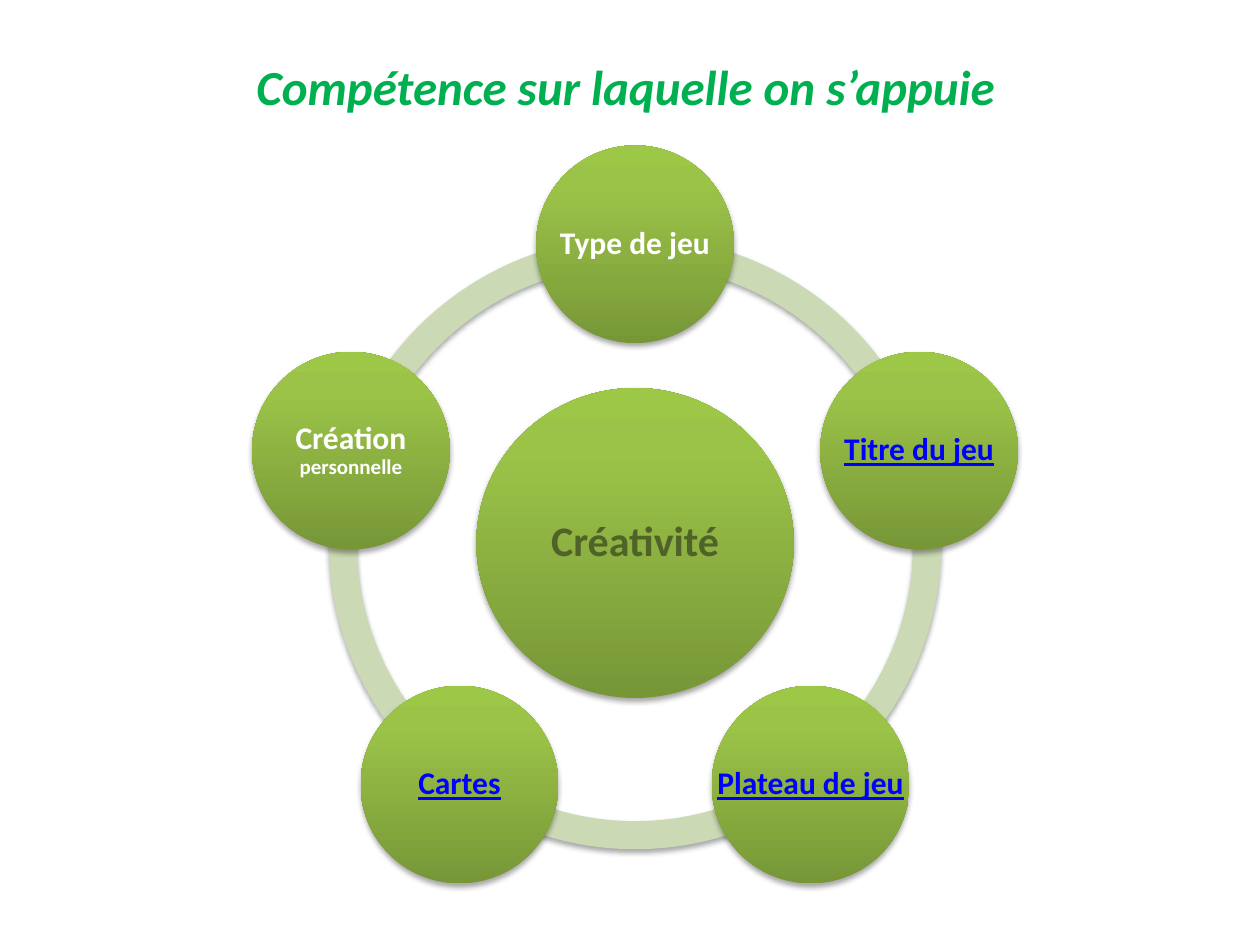
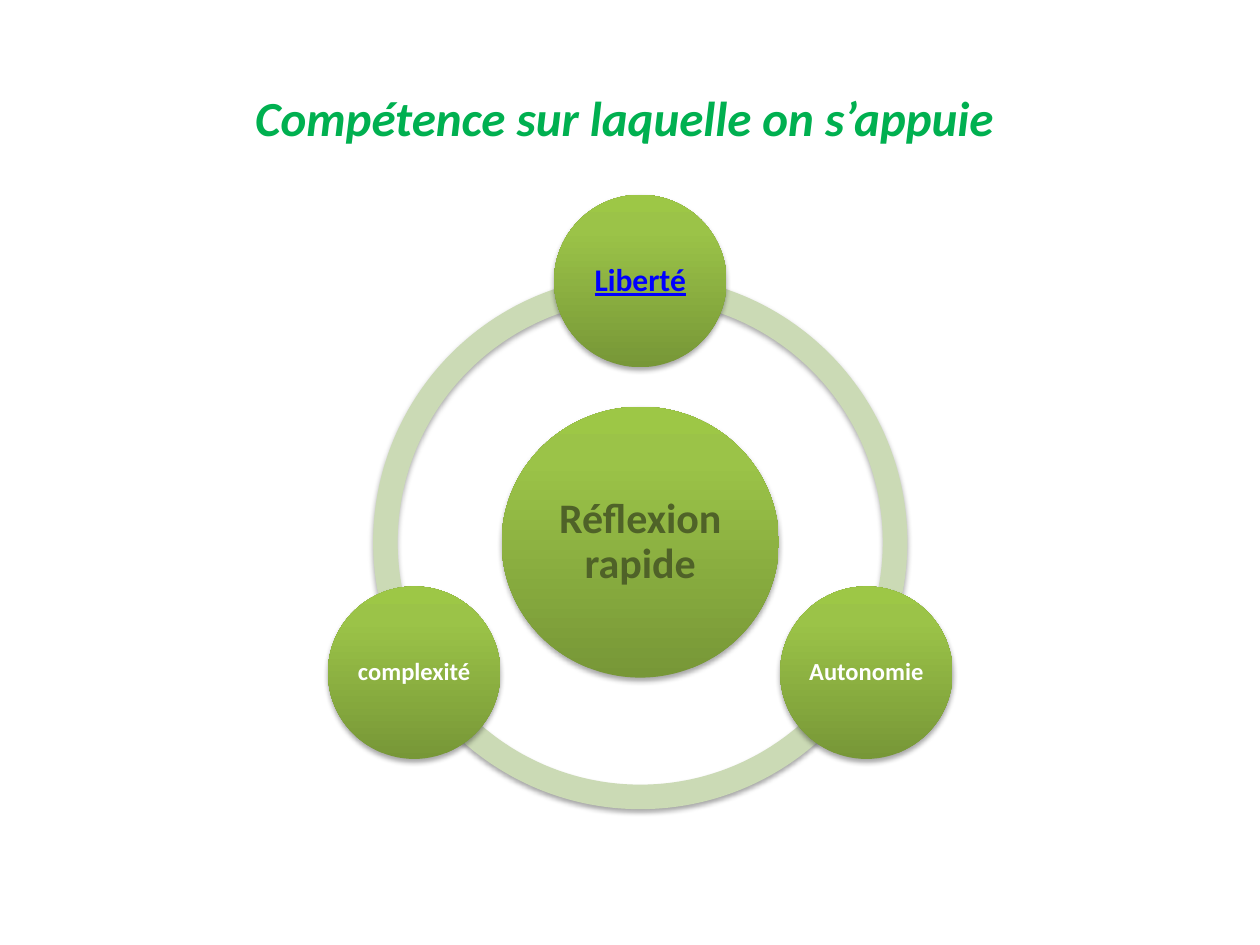
import copy
import math

import pptx
import pptx.dml.color
import pptx.enum.shapes
import pptx.enum.text
import pptx.util
from lxml import etree
from pptx.oxml.ns import qn

Pt = pptx.util.Pt

COLORS = {
    "title": "00B050",
    "ring": "CBDAB5",
    "dark": "779737",
    "middle": "9BC348",
    "light": "9DC746",
    "hub": "4F6228",
    "white": "FFFFFF",
    "link": "0000FF",
    "shadow": "000000",
}
FONT = "Calibri"
TITLE = "Compétence sur laquelle on s’appuie "
GRADIENT = [(0, "dark"), (0.8, "middle"), (1, "light")]
RING_THICKNESS = 0.046
LINK = {"color": "link", "underline": True}

SLIDES = [
    {
        "title_box": (36.7, 15.1, 648, 68.4),
        "center": (362.9, 310.3),
        "orbit": 170.7,
        "ring": 350,
        "hub": ("Créativité", 181.4, 177.1),
        "node_size": 113,
        "nodes": [
            ([("Type de jeu", 18)], {}),
            ([("Titre du jeu", 18)], LINK),
            ([("Plateau de jeu", 18)], LINK),
            ([("Cartes", 18)], LINK),
            ([("Création ", 18), ("personnelle", 12)], {}),
        ],
    },
    {
        "title_box": (36, 21.6, 648, 90),
        "center": (365.9, 309.8),
        "orbit": 149.2,
        "ring": 305.3,
        "hub": ("Réflexion rapide", 158.4, 154.8),
        "node_size": 98.6,
        "nodes": [
            ([("Liberté", 18)], LINK),
            ([("Autonomie", 14)], {}),
            ([("complexité", 14)], {}),
        ],
    },
]


def rgb(name):
    return pptx.dml.color.RGBColor.from_string(COLORS[name])


def write_text(frame, runs, color="white", italic=False, underline=False, spacing=None):
    frame.word_wrap = True
    frame.vertical_anchor = pptx.enum.text.MSO_ANCHOR.MIDDLE
    paragraph = frame.paragraphs[0]
    paragraph.alignment = pptx.enum.text.PP_ALIGN.CENTER
    paragraph.line_spacing = spacing
    for text, size in runs:
        run = paragraph.add_run()
        run.text = text
        font = run.font
        font.name, font.size, font.bold = FONT, Pt(size), True
        font.italic, font.underline = italic, underline
        font.color.rgb = rgb(color)


def centered_box(center, width, height):
    x, y = center
    return Pt(x - width / 2), Pt(y - height / 2), Pt(width), Pt(height)


def add_shadowed_shape(slide, kind, box):
    shape = slide.shapes.add_shape(kind, *box)
    shape.line.fill.background()
    shape.shadow.inherit = False
    effects = shape._element.spPr.find(qn("a:effectLst"))
    shadow = etree.SubElement(
        effects, qn("a:outerShdw"), blurRad=str(Pt(3.1)), dist=str(Pt(1.8)),
        dir="5400000", rotWithShape="0")
    color = etree.SubElement(shadow, qn("a:srgbClr"), val=COLORS["shadow"])
    etree.SubElement(color, qn("a:alpha"), val="35000")
    return shape


def add_arc(slide, center, size, start, end):
    arc = add_shadowed_shape(
        slide, pptx.enum.shapes.MSO_SHAPE.BLOCK_ARC, centered_box(center, size, size))
    arc.fill.solid()
    arc.fill.fore_color.rgb = rgb("ring")
    arc.adjustments[0] = start % 360 * 0.6
    arc.adjustments[1] = end % 360 * 0.6
    arc.adjustments[2] = RING_THICKNESS


def add_disc(slide, center, width, height, runs, **text_format):
    box = centered_box(center, width, height)
    disc = add_shadowed_shape(slide, pptx.enum.shapes.MSO_SHAPE.OVAL, box)
    disc.fill.gradient()
    disc.fill.gradient_angle = 90
    stops = disc._element.spPr.find(".//" + qn("a:gsLst"))
    stops.append(copy.deepcopy(stops[-1]))
    for stop, (position, color) in zip(disc.fill.gradient_stops, GRADIENT):
        stop.position = position
        stop.color.rgb = rgb(color)
    frame = slide.shapes.add_textbox(*box).text_frame
    frame.margin_left = frame.margin_right = Pt(1.8)
    frame.margin_top = frame.margin_bottom = Pt(1.8)
    write_text(frame, runs, spacing=0.9, **text_format)


def add_cycle_slide(presentation, content):
    slide = presentation.slides.add_slide(presentation.slide_layouts[5])
    title = slide.shapes.title
    title.left, title.top, title.width, title.height = map(Pt, content["title_box"])
    write_text(title.text_frame, [(TITLE, 28)], color="title", italic=True)

    center, orbit, size = content["center"], content["orbit"], content["node_size"]
    step = 360 / len(content["nodes"])
    angles = [270 + step * index for index in range(len(content["nodes"]))]
    for angle in reversed(angles):
        add_arc(slide, center, content["ring"], angle, angle + step)

    hub_text, hub_width, hub_height = content["hub"]
    add_disc(slide, center, hub_width, hub_height, [(hub_text, 24)], color="hub")
    for angle, (runs, text_format) in zip(angles, content["nodes"]):
        radians = math.radians(angle)
        node_center = (center[0] + orbit * math.cos(radians),
                       center[1] + orbit * math.sin(radians))
        add_disc(slide, node_center, size, size, runs, **text_format)


def main():
    presentation = pptx.Presentation()
    presentation.slide_width, presentation.slide_height = Pt(720), Pt(540)
    for content in SLIDES:
        add_cycle_slide(presentation, content)
    presentation.save("out.pptx")


if __name__ == "__main__":
    main()
